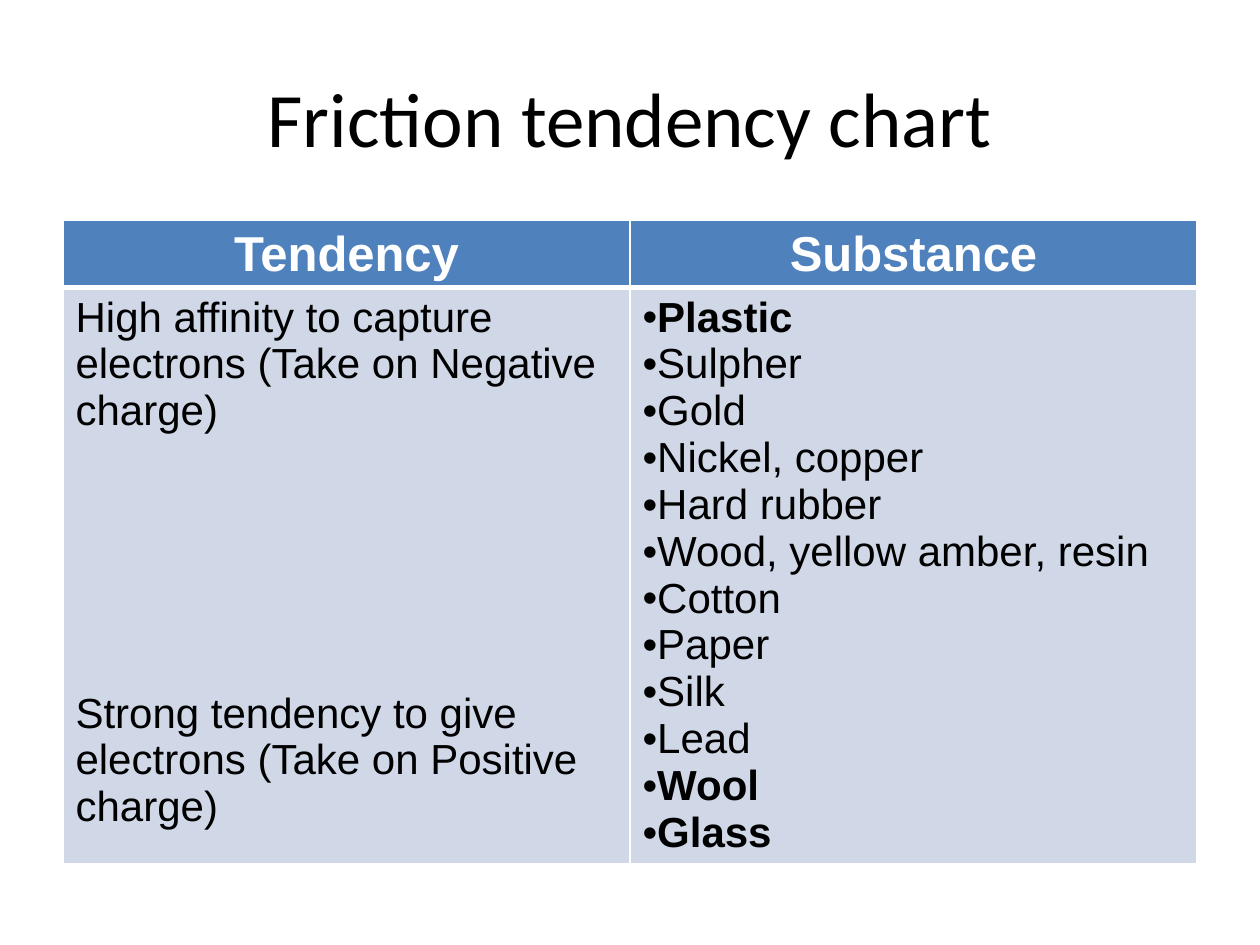
from dataclasses import dataclass

from lxml.etree import SubElement
from pptx import Presentation
from pptx.dml.color import RGBColor
from pptx.enum.text import MSO_ANCHOR as Anchor, PP_ALIGN as Align
from pptx.oxml import parse_xml
from pptx.oxml.ns import nsdecls, qn
from pptx.util import Inches, Pt

WHITE = RGBColor(0xFF, 0xFF, 0xFF)
BLACK = RGBColor(0, 0, 0)
BLUE = RGBColor(0x4F, 0x81, 0xBD)
PALE_BLUE = RGBColor(0xD0, 0xD8, 0xE8)


@dataclass(frozen=True)
class Line:
    text: str
    bold: bool = False
    bullet: bool = False
    space_before: float = 0


@dataclass(frozen=True)
class RowStyle:
    height: float
    size: int
    color: RGBColor
    fill: RGBColor
    align: Align
    bottom_border: int


HEADER = RowStyle(0.53, 28, WHITE, BLUE, Align.CENTER, 3)
BODY = RowStyle(4.57, 24, BLACK, PALE_BLUE, Align.LEFT, 1)

TENDENCIES = [
    Line("High affinity to capture electrons (Take on Negative charge)"),
    Line("Strong tendency to give electrons (Take on Positive charge)", space_before=146),
]
SUBSTANCES = [
    "Plastic", "Sulpher", "Gold", "Nickel, copper", "Hard rubber",
    "Wood, yellow amber, resin", "Cotton", "Paper", "Silk", "Lead", "Wool", "Glass",
]
BOLD_SUBSTANCES = {"Plastic", "Wool", "Glass"}

ROWS = [
    (HEADER, [[Line("Tendency", bold=True)], [Line("Substance", bold=True)]]),
    (BODY, [
        TENDENCIES,
        [Line(name, name in BOLD_SUBSTANCES, bullet=True) for name in SUBSTANCES],
    ]),
]


def format_font(font, name: str, size: int, color: RGBColor, bold: bool = False) -> None:
    font.name = name
    font.size = Pt(size)
    font.bold = bold
    font.color.rgb = color


def add_bullet(para) -> None:
    properties = para._p.get_or_add_pPr()
    SubElement(properties, qn("a:buFont")).set("typeface", "Arial")
    SubElement(properties, qn("a:buChar")).set("char", "•")


def set_borders(cell, top: int, bottom: int) -> None:
    widths = {"lnL": 1, "lnR": 1, "lnT": top, "lnB": bottom}
    properties = cell._tc.get_or_add_tcPr()
    for index, (side, width) in enumerate(widths.items()):
        properties.insert(index, parse_xml(
            f'<a:{side} {nsdecls("a")} w="{Pt(width)}"><a:solidFill>'
            f'<a:srgbClr val="{WHITE}"/></a:solidFill></a:{side}>'
        ))


def fill_cell(cell, lines: list[Line], style: RowStyle, top_border: int) -> None:
    cell.fill.solid()
    cell.fill.fore_color.rgb = style.fill
    set_borders(cell, top_border, style.bottom_border)
    frame = cell.text_frame
    frame.text = "\n".join(line.text for line in lines)
    for para, line in zip(frame.paragraphs, lines):
        para.alignment = style.align
        if line.space_before:
            para.space_before = Pt(line.space_before)
        if line.bullet:
            add_bullet(para)
        format_font(para.runs[0].font, "Arial", style.size, style.color, line.bold)


def add_title(page, text: str) -> None:
    title = page.shapes.title
    title.left, title.top = Inches(0.5), Inches(0.3)
    title.width, title.height = Inches(9), Inches(1.25)
    frame = title.text_frame
    frame.text = text
    frame.vertical_anchor = Anchor.MIDDLE
    para = frame.paragraphs[0]
    para.alignment = Align.CENTER
    format_font(para.runs[0].font, "Calibri", 44, BLACK)


def add_tendency_table(page) -> None:
    height = sum(style.height for style, _ in ROWS)
    table = page.shapes.add_table(
        len(ROWS), 2, Inches(0.5), Inches(1.75), Inches(9), Inches(height)
    ).table
    top_border = 1
    for row, (style, cells) in zip(table.rows, ROWS):
        row.height = Inches(style.height)
        for cell, lines in zip(row.cells, cells):
            fill_cell(cell, lines, style, top_border)
        top_border = style.bottom_border


def main() -> None:
    deck = Presentation()
    deck.slide_width, deck.slide_height = Inches(10), Inches(7.5)
    page = deck.slides.add_slide(deck.slide_layouts.get_by_name("Title Only"))
    add_title(page, "Friction tendency chart")
    add_tendency_table(page)
    deck.save("out.pptx")


if __name__ == "__main__":
    main()
